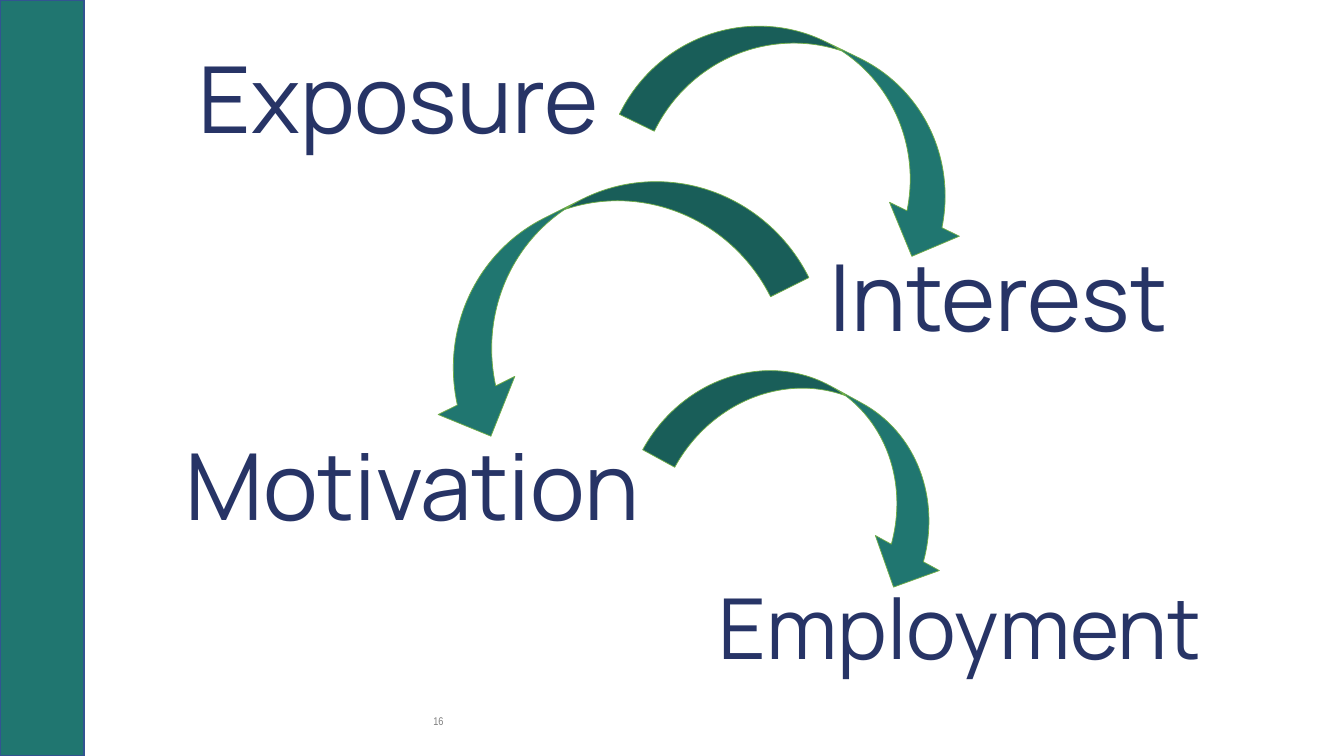
from pptx import Presentation
from pptx.dml.color import RGBColor
from pptx.enum.shapes import MSO_SHAPE
from pptx.enum.text import MSO_ANCHOR, MSO_AUTO_SIZE, PP_ALIGN
from pptx.util import Pt


def rgb(color):
    return RGBColor.from_string(color)


class Deck:
    TEAL, NAVY, GREY = "207670", "273466", "7F7F7F"
    BAR_LINE, ARROW_LINE = "325491", "70AD47"
    WORD_FONT, NUMBER_FONT = "Manrope", "Arial Narrow"

    def __init__(self, width, height):
        self.prs = Presentation()
        self.prs.slide_width, self.prs.slide_height = Pt(width), Pt(height)
        self.s = self.prs.slides.add_slide(self.prs.slide_layouts[6])

    def shape(self, kind, box, line, weight, rotation=0):
        sp = self.s.shapes.add_shape(kind, *map(Pt, box))
        sp.shadow.inherit = False
        sp.rotation = rotation
        sp.fill.solid()
        sp.fill.fore_color.rgb = rgb(self.TEAL)
        sp.line.color.rgb = rgb(line)
        sp.line.width = Pt(weight)

    def arrow(self, kind, box, rotation):
        self.shape(kind, box, self.ARROW_LINE, 0.5, rotation)

    def text(self, text, box, size, font, color):
        tf = self.s.shapes.add_textbox(*map(Pt, box)).text_frame
        tf.text = text
        tf.word_wrap = True
        tf.vertical_anchor = MSO_ANCHOR.MIDDLE
        p = tf.paragraphs[0]
        p.alignment = PP_ALIGN.RIGHT
        r = p.runs[0]
        r.font.name, r.font.size = font, Pt(size)
        r.font.color.rgb = rgb(color)
        return tf

    def word(self, text, box, size=66):
        tf = self.text(text, box, size, self.WORD_FONT, self.NAVY)
        tf.margin_left = tf.margin_right = tf.margin_top = tf.margin_bottom = 0
        tf.word_wrap = False
        tf.auto_size = MSO_AUTO_SIZE.SHAPE_TO_FIT_TEXT

    def number(self, text, box):
        self.text(text, box, 8, self.NUMBER_FONT, self.GREY)


def main():
    deck = Deck(960, 540)

    # Side bar
    deck.shape(MSO_SHAPE.RECTANGLE, (0, 0, 60, 540), deck.BAR_LINE, 1)

    # Arrows from each stage to the next
    deck.arrow(MSO_SHAPE.CURVED_DOWN_ARROW, (453.6, 33, 260, 111), 25.9)
    deck.arrow(MSO_SHAPE.CURVED_DOWN_ARROW, (470, 278.6, 230.4, 104.4), 28.7)
    deck.arrow(MSO_SHAPE.CURVED_RIGHT_ARROW, (362, 64.8, 122.4, 284.4), 63.5)

    # Stages
    deck.word("Exposure", (126, 28.8, 301.7, 80))
    deck.word("Interest", (579.6, 170.6, 254.2, 80))
    deck.word("Motivation", (102.2, 305.3, 355, 80))
    deck.word("Employment", (470.2, 410.4, 388, 72.7), size=60)

    # Slide number
    deck.number("16", (0, 500.4, 324, 28.8))

    deck.prs.save("out.pptx")


if __name__ == "__main__":
    main()
